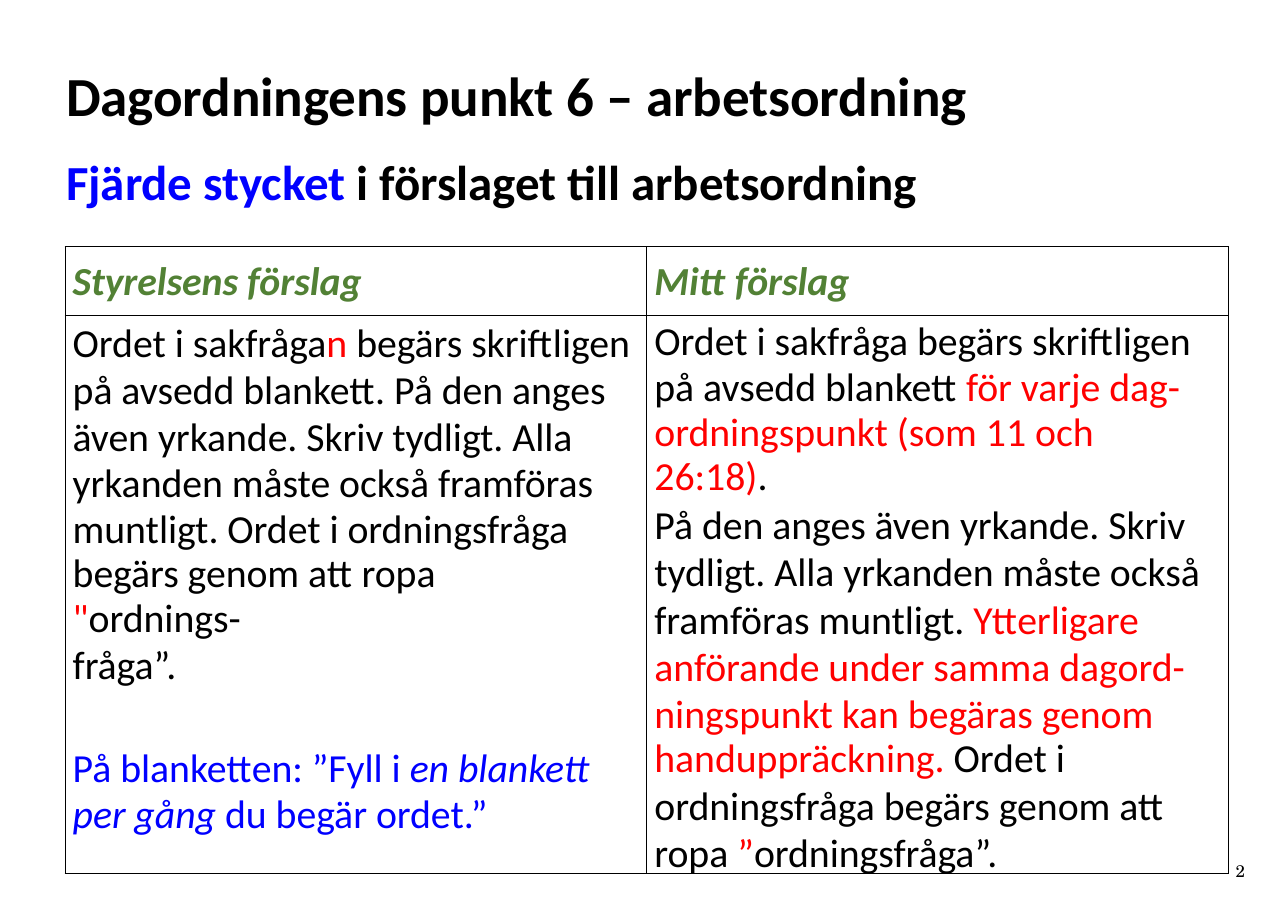
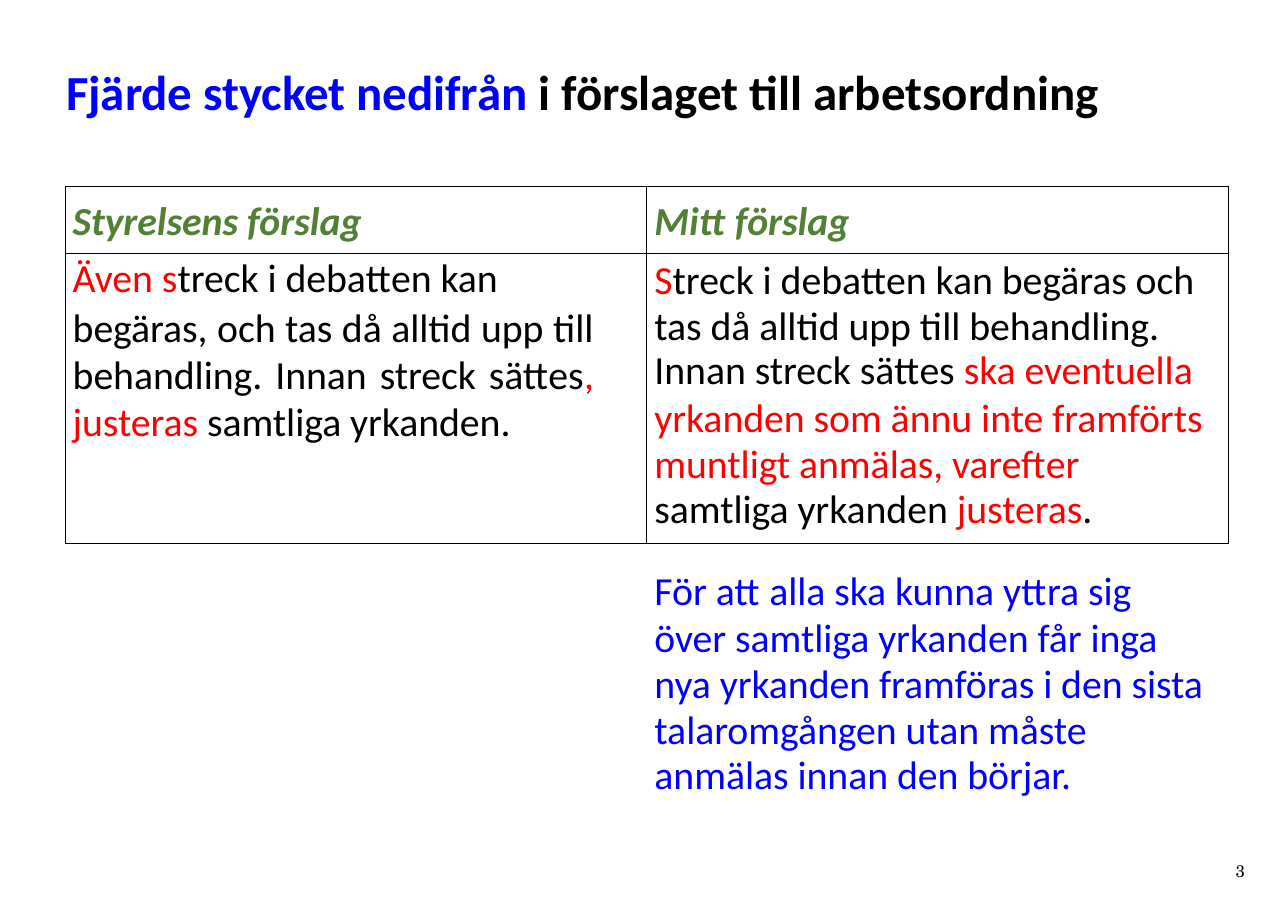
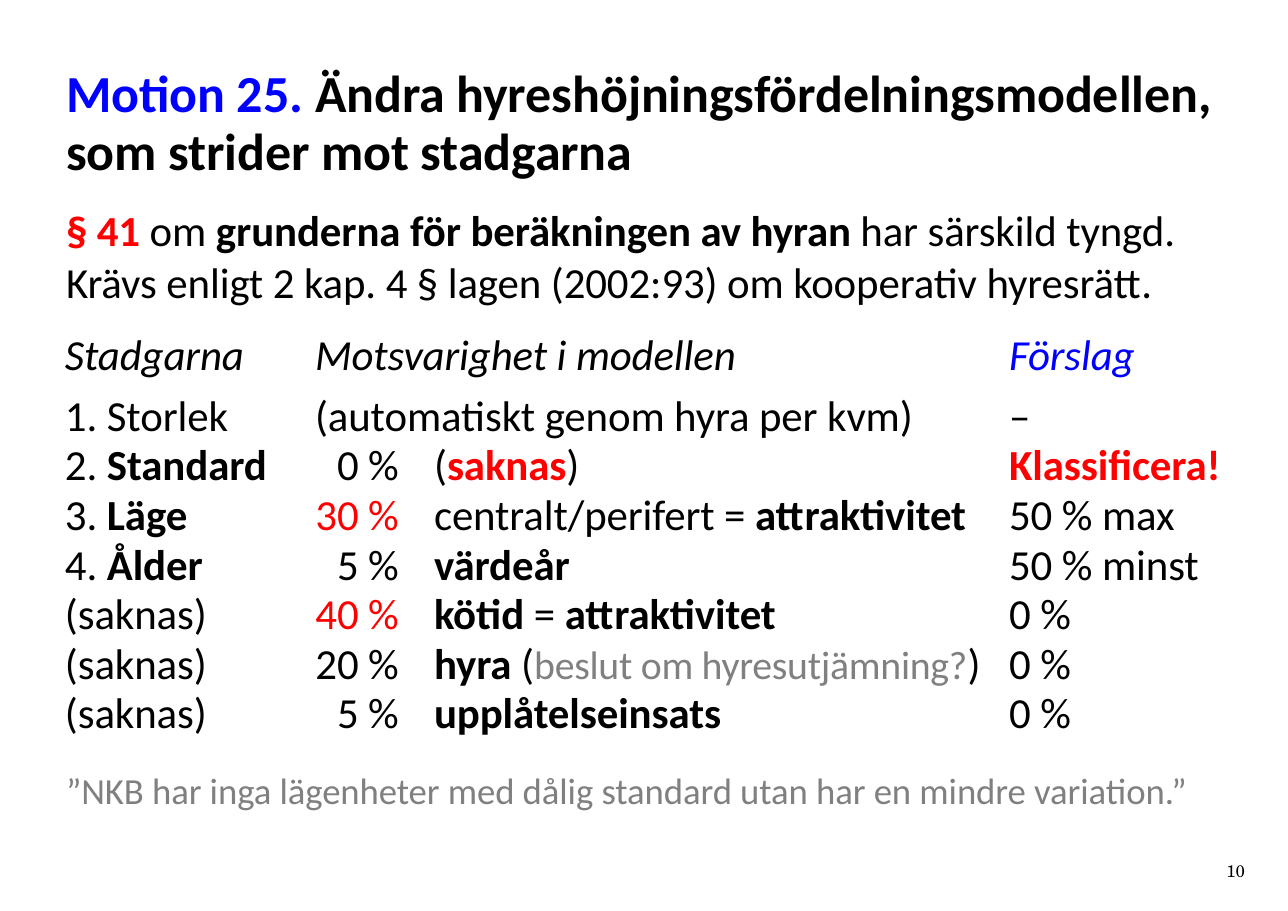
"""Builds three slides on the agenda: two comparisons of wording and one rent model."""
from lxml import etree
from pptx import Presentation, util as u
from pptx.dml.color import RGBColor
from pptx.enum import text
from pptx.oxml.ns import qn

BODY_FONT, NUMBER_FONT = "Calibri", "TeX Gyre Schola"
BLACK, TEXT_LEFT = "000000", 0.6
PLAIN_TABLE_STYLE = "{2D5ABB26-0587-4C30-8999-92F81FD0307C}"
MARKS = {
    "red": {"color": "FF0000"},
    "blue": {"color": "0000FF"},
    "green": {"color": "528135"},
    "gray": {"color": "808080"},
    "bold": {"bold": True},
    "italic": {"italic": True},
    "small": {"size": 26, "spacing": -20},
}


def write(owner, margins, paragraphs, size, font=BODY_FONT):
    """Fill a text frame or a cell with paragraphs of marked runs."""
    for side, inches in zip(("left", "top", "right", "bottom"), margins):
        setattr(owner, f"margin_{side}", u.Inches(inches))
    frame = getattr(owner, "text_frame", owner)
    frame.word_wrap = True
    for index, (runs, layout) in enumerate(paragraphs):
        paragraph = frame.paragraphs[0] if index == 0 else frame.add_paragraph()
        paragraph.alignment = layout.get("align", text.PP_ALIGN.LEFT)
        paragraph.space_before = u.Pt(layout.get("before", 0))
        line = layout.get("line", 1.0)
        paragraph.line_spacing = line if line < 3 else u.Pt(line)
        for attribute, side in (("marL", "left"), ("marR", "right")):
            indent = u.Inches(layout.get(side, 0))
            paragraph._p.get_or_add_pPr().set(attribute, str(indent))
        for words, marks in runs:
            style = {"name": font, "size": size, "color": BLACK, "spacing": -5,
                     "bold": False, "italic": False}
            for mark in marks.split():
                style.update(MARKS[mark])
            run = paragraph.add_run()
            run.text = words
            run.font.color.rgb = RGBColor.from_string(style.pop("color"))
            run.font.size = u.Pt(style.pop("size"))
            run._r.get_or_add_rPr().set("spc", str(style.pop("spacing")))
            for name, value in style.items():
                setattr(run.font, name, value)


def draw_borders(cell, sides):
    """Draw thin black lines on the given sides (L, R, T, B) of a cell."""
    for side in sides:
        line = etree.SubElement(cell._tc.get_or_add_tcPr(), qn(f"a:ln{side}"), w=str(u.Pt(0.5)))
        fill = etree.SubElement(line, qn("a:solidFill"))
        etree.SubElement(fill, qn("a:srgbClr"), val=BLACK)


proposal_headings = [
    (0, column, 1, (0.07, 0.1, 0, 0), "LRTB", [([(words, "green bold italic")], {"before": 7.5})])
    for column, words in enumerate(("Styrelsens förslag", "Mitt förslag"))
]

fourth_board = [
    ([("Ordet i sakfråga", ""), ("n ", "red"),
      ("begärs skriftligen på avsedd blankett. På den anges även yrkande. "
       "Skriv tydligt. Alla", "")], {"line": 0.97, "before": 2.8}),
    ([("yrkanden måste också framföras muntligt. Ordet i ordningsfråga", "")],
     {"line": 30.1, "before": 0.8}),
    ([("begärs genom att ropa ", ""), ('"', "red"), ("ordnings-", "")],
     {"line": 28.9, "right": 0.55}),
    ([("fråga”.", "")], {"line": 30.8}),
    ([("På blanketten: ”Fyll i ", "blue"), ("en blankett per gång ", "blue italic"),
      ("du begär ordet.”", "blue")], {"line": 30.2, "before": 37, "right": 0.2}),
]
fourth_mine = [
    ([("Ordet i sakfråga begärs skriftligen på avsedd blankett ", ""),
      ("för varje dag-", "red")], {"line": 30.1, "before": 3.6}),
    ([("ordningspunkt (som 11 och 26:18)", "red"), (".", "")], {"line": 28.9, "right": 0.5}),
    ([("På den anges även yrkande. Skriv tydligt. Alla yrkanden måste också "
       "framföras muntligt. ", ""),
      ("Ytterligare anförande under samma dagord- ningspunkt kan begäras genom", "red")],
     {"line": 0.97, "before": 0.5}),
    ([("handuppräckning. ", "red"), ("Ordet i", "")], {"line": 29.6}),
    ([("ordningsfråga begärs genom att ropa ", ""), ("”", "red"), ("ordningsfråga”.", "")],
     {"line": 30.4, "before": 1.1}),
]
debate_board = [
    ([("Även s", "red"), ("treck i debatten kan", "")], {"line": 30.6, "before": 1.9}),
    ([("begäras, och tas då alltid upp till behandling. Innan streck sättes", ""),
      (", justeras ", "red"), ("samtliga yrkanden.", "")],
     {"line": 0.97, "before": 0.5, "right": 0.48, "align": text.PP_ALIGN.JUSTIFY}),
]
debate_mine = [
    ([("S", "red"), ("treck i debatten kan begäras och tas då alltid upp till behandling.", "")],
     {"line": 30.1, "before": 3.8}),
    ([("Innan streck sättes ", ""), ("ska eventuella", "red")], {"line": 28.9}),
    ([("yrkanden som ännu inte framförts muntligt anmälas, varefter", "red")],
     {"line": 30.1, "before": 1.4}),
    ([("samtliga yrkanden ", ""), ("justeras", "red"), (".", "")], {"line": 29.4}),
]
debate_reason = [
    ([("För att alla ska kunna yttra sig över samtliga yrkanden får inga", "blue")],
     {"line": 30.1, "before": 17.6, "left": 5.35, "right": 0.17}),
    ([("nya yrkanden framföras i den sista talaromgången utan måste", "blue")],
     {"line": 30.1, "before": 0.2, "left": 5.35}),
    ([("anmälas innan den börjar.", "blue")], {"line": 29.4, "left": 5.35}),
]

rent_rows = [
    (26.6, [("Stadgarna", "italic")], None, [("Motsvarighet i modellen", "italic")],
     [("Förslag", "blue italic")]),
    (32.8, [("1. Storlek", "")], None, [("(automatiskt genom hyra per kvm)", "")], [("–", "")]),
    (31.1, [("2. ", ""), ("Standard", "bold")], [("0 %", "")],
     [("(", ""), ("saknas", "red bold"), (")", "")], [("Klassificera!", "red bold")]),
    (28.8, [("3. ", ""), ("Läge", "bold")], [("30 %", "red")],
     [("centralt/perifert = ", ""), ("attraktivitet", "bold")], [("50 % max", "")]),
    (28.9, [("4. ", ""), ("Ålder", "bold")], [("5 %", "")], [("värdeår", "bold")],
     [("50 % minst", "")]),
    (28.8, [("(saknas)", "")], [("40 %", "red")],
     [("kötid ", "bold"), ("= ", ""), ("attraktivitet", "bold")], [("0 %", "")]),
    (28.9, [("(saknas)", "")], [("20 %", "")],
     [("hyra ", "bold"), ("(", ""), ("beslut om hyresutjämning?", "gray small"), (")", "")],
     [("0 %", "")]),
    (28.9, [("(saknas)", "")], [("5 %", "")], [("upplåtelseinsats", "bold")], [("0 %", "")]),
]
rent_cells = []
for row, (line, statute, share, model, proposal) in enumerate(rent_rows):
    layout = {"line": line}
    rent_cells.append((row, 0, 1, (0.03, 0, 0, 0), "", [(statute, layout)]))
    rent_cells.append((row, 3, 1, (0.18, 0, 0, 0), "", [(proposal, layout)]))
    if share is None:
        rent_cells.append((row, 1, 2, (0.21, 0, 0, 0), "", [(model, layout)]))
    else:
        right_aligned = {"line": line, "align": text.PP_ALIGN.RIGHT}
        rent_cells.append((row, 1, 1, (0, 0, 0.16, 0), "", [(share, right_aligned)]))
        rent_cells.append((row, 2, 1, (0.16, 0, 0, 0), "", [(model, layout)]))

pages = [
    {
        "number": "2",
        "boxes": [
            (0.55, 0.63, 0.01, 36, [("Dagordningens punkt 6 – arbetsordning", "bold")],
             {"before": 1}),
            (1.37, 0.56, 0.01, 32, [("Fjärde stycket ", "blue bold"),
                                    ("i förslaget till arbetsordning", "bold")], {"before": 1.1}),
        ],
        "table": (0.59, 2.24, [5.28, 5.28], [0.62, 4.72], 26),
        "cells": proposal_headings + [
            (1, 0, 1, (0.07, 0.04, 0, 0), "LRTB", fourth_board),
            (1, 1, 1, (0.07, 0.05, 0, 0), "LRTB", fourth_mine),
        ],
    },
    {
        "number": "3",
        "boxes": [
            (0.55, 0.63, 0.01, 32, [("Fjärde stycket nedifrån ", "blue bold"),
                                    ("i förslaget till arbetsordning", "bold")], {"before": 1}),
        ],
        "table": (0.59, 1.69, [5.28, 5.28], [0.61, 2.63, 2.35], 26),
        "cells": proposal_headings + [
            (1, 0, 1, (0.07, 0.03, 0, 0), "LRTB", debate_board),
            (1, 1, 1, (0.07, 0.05, 0, 0), "LRTB", debate_mine),
            (2, 0, 2, (0, 0.25, 0, 0), "T", debate_reason),
        ],
    },
    {
        "number": "10",
        "boxes": [
            (0.53, 1.12, 0.06, 34, [("Motion 25. ", "blue bold"),
                                    ("Ändra hyreshöjningsfördelningsmodellen, "
                                     "som strider mot stadgarna", "bold")],
             {"line": 38, "before": 4.5}),
            (1.84, 0.97, 0, 28, [("§ 41 ", "red bold"), ("om ", ""),
                                 ("grunderna för beräkningen av hyran ", "bold"),
                                 ("har särskild tyngd. Krävs enligt 2 kap. 4 § lagen (2002:93) "
                                  "om kooperativ hyresrätt.", "")],
             {"line": 1.02, "before": 0.3}),
            (6.96, 0.43, 0.01, 24, [("”NKB har inga lägenheter med dålig standard "
                                     "utan har en mindre variation.”", "gray")], {"before": 1}),
        ],
        "table": (0.56, 3.1, [2.09, 1.13, 5.2, 2.15],
                  [0.47, 0.47, 0.48, 0.45, 0.45, 0.45, 0.45, 0.42], 28),
        "cells": rent_cells,
    },
]

deck = Presentation()
deck.slide_width, deck.slide_height = u.Inches(11.69), u.Inches(8.27)
for page in pages:
    slide = deck.slides.add_slide(deck.slide_layouts[6])
    number = slide.shapes.add_textbox(u.Inches(11), u.Inches(7.81), u.Inches(0.3), u.Inches(0.2))
    write(number.text_frame, (0, 0, 0, 0),
          [([(page["number"], "")], {"before": 0.1, "align": text.PP_ALIGN.RIGHT})],
          11, NUMBER_FONT)
    for top, height, inset, size, runs, layout in page["boxes"]:
        box = slide.shapes.add_textbox(u.Inches(TEXT_LEFT), u.Inches(top),
                                       u.Inches(10.53), u.Inches(height))
        write(box.text_frame, (0, inset, 0, 0), [(runs, layout)], size)

    left, top, widths, heights, size = page["table"]
    table = slide.shapes.add_table(len(heights), len(widths), u.Inches(left), u.Inches(top),
                                   u.Inches(sum(widths)), u.Inches(sum(heights))).table
    table.first_row = table.horz_banding = False
    table._tbl.tblPr.find(qn("a:tableStyleId")).text = PLAIN_TABLE_STYLE
    for column, width in zip(table.columns, widths):
        column.width = u.Inches(width)
    for row, height in zip(table.rows, heights):
        row.height = u.Inches(height)
    for row, column, span, margins, sides, paragraphs in page["cells"]:
        cell = table.cell(row, column)
        if span > 1:
            cell.merge(table.cell(row, column + span - 1))
        draw_borders(cell, sides)
        write(cell, margins, paragraphs, size)
    for cell in table.iter_cells():
        cell.fill.background()

deck.save("out.pptx")
